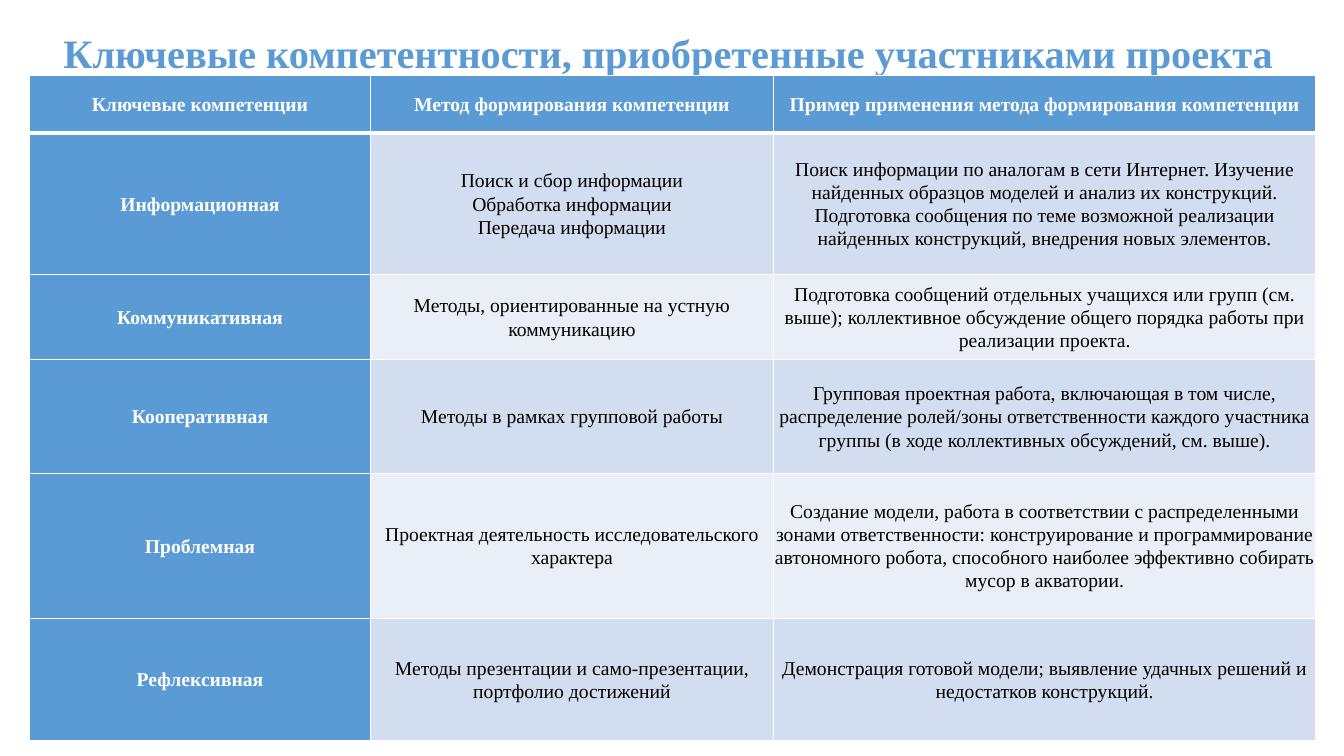
"""Build a slide with a table of the key skills gained in a project."""
from copy import deepcopy
from dataclasses import dataclass

from lxml.etree import SubElement
from pptx import Presentation
from pptx.dml.color import RGBColor
from pptx.enum.text import MSO_ANCHOR, PP_ALIGN
from pptx.oxml.ns import qn
from pptx.util import Pt

BLUE = RGBColor(0x5B, 0x9B, 0xD5)
DARK = RGBColor(0xD2, 0xDE, 0xEF)
PALE = RGBColor(0xEA, 0xEF, 0xF7)
WHITE = RGBColor(0xFF, 0xFF, 0xFF)
BLACK = RGBColor(0x00, 0x00, 0x00)

WIDTHS = (243.4, 288, 387.4)
EDGE = Pt(0.72)
CELL = {"vertical_anchor": MSO_ANCHOR.MIDDLE, "margin_left": EDGE,
        "margin_right": EDGE, "margin_top": EDGE, "margin_bottom": EDGE}
FRAME = {"word_wrap": True, "vertical_anchor": MSO_ANCHOR.MIDDLE}
HEAD = {"alignment": PP_ALIGN.CENTER, "line_spacing": 0.9}
BODY = {"alignment": PP_ALIGN.CENTER, "line_spacing": 1.07,
        "space_after": Pt(8)}


@dataclass
class Row:
    """Hold the height and the texts of one table row."""
    high: float
    texts: tuple[str, str, str]


ROWS = (
    Row(41, ("Ключевые компетенции", "Метод формирования компетенции",
             "Пример применения метода формирования компетенции")),
    Row(101, ("Информационная",
              "Поиск и сбор информации\nОбработка информации\n"
              "Передача информации",
              "Поиск информации по аналогам в сети Интернет. Изучение "
              "найденных образцов моделей и анализ их конструкций.\n"
              "Подготовка сообщения по теме возможной реализации "
              "найденных конструкций, внедрения новых элементов.")),
    Row(61, ("Коммуникативная",
             "Методы, ориентированные на устную коммуникацию",
             "Подготовка сообщений отдельных учащихся или групп (см. "
             "выше); коллективное обсуждение общего порядка работы при "
             "реализации проекта.")),
    Row(81, ("Кооперативная", "Методы в рамках групповой работы",
             "Групповая проектная работа, включающая в том числе, "
             "распределение ролей/зоны ответственности каждого участника "
             "группы (в ходе коллективных обсуждений, см. выше).")),
    Row(103.7, ("Проблемная",
                "Проектная деятельность исследовательского характера",
                "Создание модели, работа в соответствии с распределенными "
                "зонами ответственности: конструирование и "
                "программирование автономного робота, способного наиболее "
                "эффективно собирать мусор в акватории.")),
    Row(87.1, ("Рефлексивная",
               "Методы презентации и само-презентации, портфолио "
               "достижений",
               "Демонстрация готовой модели; выявление удачных решений и "
               "недостатков конструкций.")),
)


def apply(item, form: dict) -> None:
    """Set each format value on the item."""
    for name, value in form.items():
        setattr(item, name, value)


def write(frame, text: str, size: float, color: RGBColor, bold: bool,
          form: dict) -> None:
    """Put one formatted paragraph in a text frame."""
    para = frame.paragraphs[0]
    para.text = text
    apply(para, form)
    for run in para.runs:
        apply(run.font, {"name": "Times New Roman", "size": Pt(size),
                         "bold": bold})
        run.font.color.rgb = color
    for gap in para._p.findall(qn("a:br")):
        gap.append(deepcopy(para.runs[0]._r.rPr))


def border(cell, side: str, width: float) -> None:
    """Draw a white line on one side of a cell."""
    line = SubElement(cell._tc.get_or_add_tcPr(), qn(f"a:ln{side}"),
                      w=str(Pt(width)))
    fill = SubElement(line, qn("a:solidFill"))
    SubElement(fill, qn("a:srgbClr"), val=str(WHITE))


def draw_cell(cell, text: str, row: int, col: int) -> None:
    """Format and fill one cell by its place in the table."""
    label = row == 0 or col == 0
    apply(cell, CELL)
    widths = {"L": 1, "R": 1, "T": 3 if row == 1 else 1,
              "B": 3 if row == 0 else 1}
    for side, width in widths.items():
        border(cell, side, width)
    cell.fill.solid()
    cell.fill.fore_color.rgb = BLUE if label else DARK if row % 2 else PALE
    write(cell.text_frame, text, 14, WHITE if label else BLACK, label, BODY)


def draw_table(slide) -> None:
    """Add the table of skills."""
    high = sum(row.high for row in ROWS)
    table = slide.shapes.add_table(len(ROWS), len(WIDTHS), Pt(21.2), Pt(54),
                                   Pt(sum(WIDTHS)), Pt(high)).table
    for col, width in enumerate(WIDTHS):
        table.columns[col].width = Pt(width)
    for row, item in enumerate(ROWS):
        table.rows[row].height = Pt(item.high)
        for col, text in enumerate(item.texts):
            draw_cell(table.cell(row, col), text, row, col)


def main() -> None:
    """Build and save the slide."""
    deck = Presentation()
    apply(deck, {"slide_width": Pt(960), "slide_height": Pt(540)})
    slide = deck.slides.add_slide(deck.slide_layouts[6])
    title = slide.shapes.add_textbox(Pt(21), Pt(14.4), Pt(913), Pt(50.4))
    apply(title.text_frame, FRAME)
    write(title.text_frame,
          "Ключевые компетентности, приобретенные участниками проекта",
          28.8, BLUE, True, HEAD)
    draw_table(slide)
    deck.save("out.pptx")


if __name__ == "__main__":
    main()
